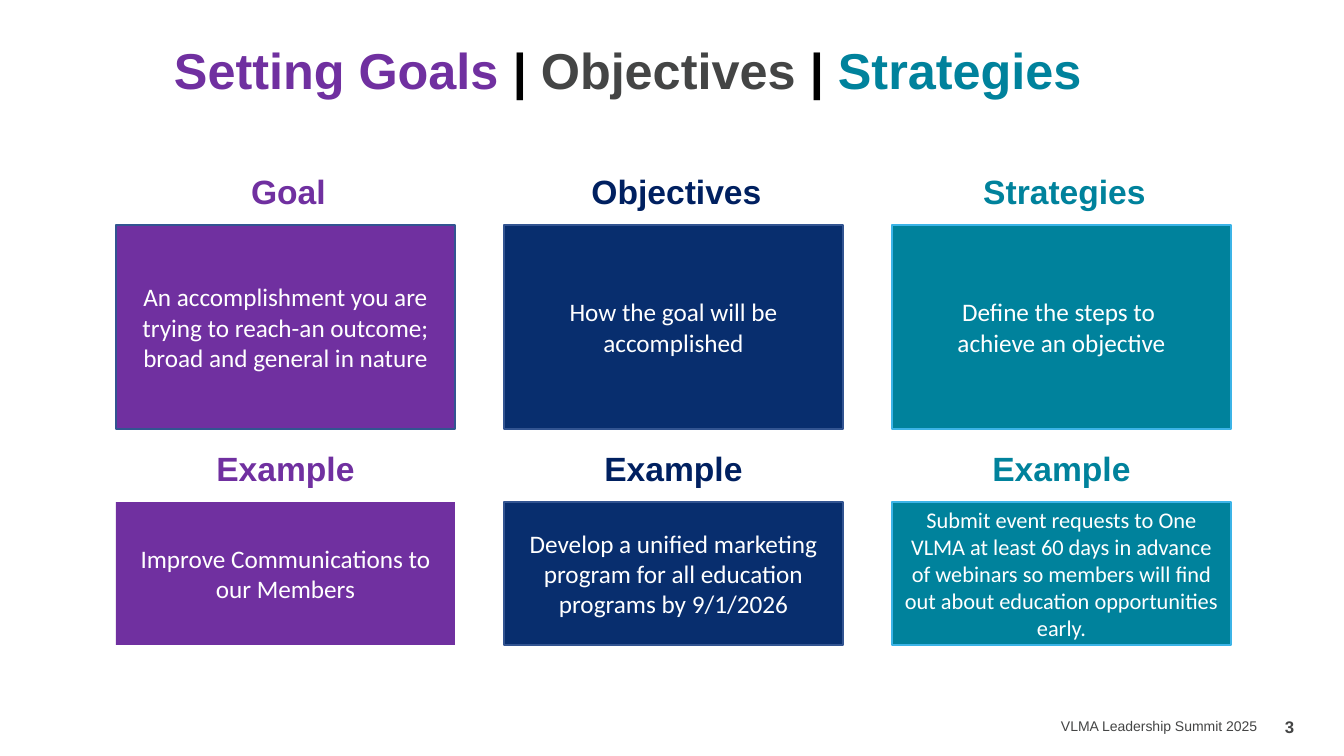
from pptx import Presentation
from pptx.dml.color import RGBColor
from pptx.enum.shapes import MSO_SHAPE
from pptx.enum.text import MSO_ANCHOR, PP_ALIGN
from pptx.util import Pt

RECT = MSO_SHAPE.RECTANGLE
SNIP_ONE = MSO_SHAPE.SNIP_1_RECTANGLE
SNIP_TWO = MSO_SHAPE.SNIP_2_SAME_RECTANGLE
TOP, MIDDLE = MSO_ANCHOR.TOP, MSO_ANCHOR.MIDDLE
LEFT, CENTER, RIGHT = PP_ALIGN.LEFT, PP_ALIGN.CENTER, PP_ALIGN.RIGHT

WIDE, HIGH = 1344, 756
PX = 12192000 / WIDE

THEME = {
    "purple": "7030A0", "navy": "082E6E", "ink": "002060", "teal": "00829C",
    "steel": "325491", "sky": "3CB4E7", "gray": "444545",
    "black": "000000", "white": "FFFFFF",
    "head": "Arial", "body": "Calibri",
    "title": 36, "label": 24, "text": 18, "small": 16, "page": 12, "foot": 10,
}

deck = Presentation()
deck.slide_width, deck.slide_height = round(WIDE * PX), round(HIGH * PX)
slide = deck.slides.add_slide(deck.slide_layouts[6])


def color(name):
    return RGBColor.from_string(THEME[name])


def write(shape, lines, font, size, align=CENTER, anchor=MIDDLE, bold=False):
    """Each line is a list of (text, color) runs."""
    frame = shape.text_frame
    frame.word_wrap = True
    frame.vertical_anchor = anchor
    for i, line in enumerate(lines):
        para = frame.add_paragraph() if i else frame.paragraphs[0]
        para.alignment = align
        for words, tint in line:
            run = para.add_run()
            run.text = words
            run.font.name = THEME[font]
            run.font.size = Pt(THEME[size])
            run.font.bold = bold
            run.font.color.rgb = color(tint)


# Title and footer
title = [("Setting Goals ", "purple"), ("| ", "black"), ("Objectives ", "gray"),
         ("| ", "black"), ("Strategies", "teal")]
plain = [
    ((164, 41, 1264, 92), title, "title", LEFT, True),
    ((531, 713, 736, 27), [("VLMA Leadership Summit 2025", "gray")], "foot", RIGHT, False),
    ((1275, 712, 45, 30), [("3", "gray")], "page", LEFT, True),
]
for place, runs, size, align, bold in plain:
    box = slide.shapes.add_textbox(*(round(n * PX) for n in place))
    write(box, [runs], "head", size, align, TOP, bold)
    if size == "title":
        box.text_frame.paragraphs[0].line_spacing = 0.9

# Columns: label, label color, fill, edges of both cards, card lines, example, its size
columns = [
    ("Goal", "purple", "purple", ("steel", None),
     ["An accomplishment you are trying to reach-an outcome; broad and general in nature"],
     "Improve Communications to our Members", "text"),
    ("Objectives", "ink", "navy", ("steel", "steel"),
     ["How the goal will be accomplished"],
     "Develop a unified marketing program for all education programs by 9/1/2026", "text"),
    ("Strategies", "teal", "teal", ("sky", "sky"),
     ["Define the steps to ", "achieve an objective"],
     "Submit event requests to One VLMA at least 60 days in advance of webinars "
     "so members will find out about education opportunities early.", "small"),
]
START, STEP, WIDTH = 116, 388, 339

for col, (label, tint, fill, edges, about, sample, size) in enumerate(columns):
    # Rows: top, height, shape, lines, type size, edge
    rows = [
        (152, 73, SNIP_ONE, [label], "label", None),
        (225, 204, RECT, about, "text", edges[0]),
        (429, 73, SNIP_TWO, ["Example"], "label", None),
        (502, 143, RECT, [sample], size, edges[1]),
    ]
    for top, height, kind, lines, points, edge in rows:
        place = (START + col * STEP, top, WIDTH, height)
        card = slide.shapes.add_shape(kind, *(round(n * PX) for n in place))
        card.shadow.inherit = False
        solid = kind == RECT
        if solid:
            card.fill.solid()
            card.fill.fore_color.rgb = color(fill)
        else:
            card.fill.background()
        if edge:
            card.line.color.rgb = color(edge)
            card.line.width = Pt(1)
        else:
            card.line.fill.background()
        # The cut corner of the top label faces left
        if kind == SNIP_ONE:
            card._element.spPr.xfrm.set("flipH", "1")
        write(card, [[(line, "white" if solid else tint)] for line in lines],
              "body" if solid else "head", points, bold=not solid)

deck.save("out.pptx")
